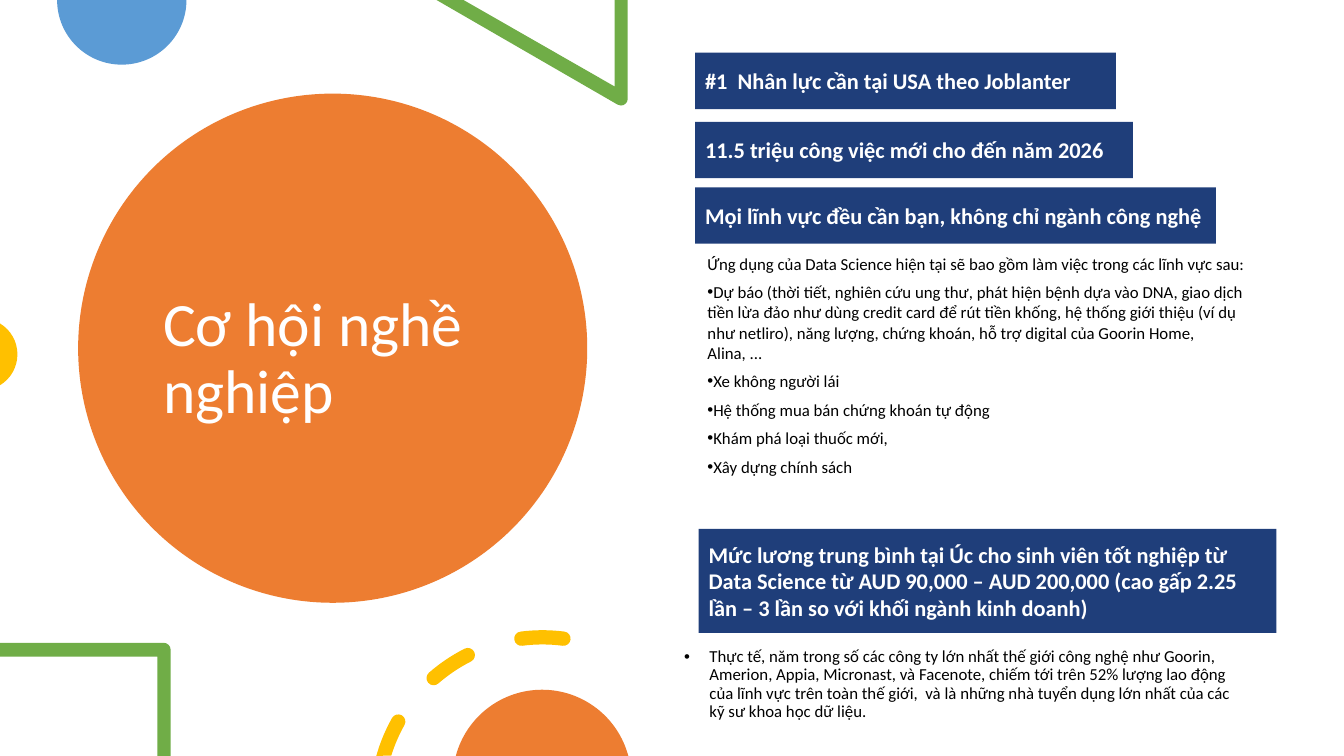
from math import cos, radians, sin, tan

from lxml import etree
from pptx import Presentation
from pptx.dml.color import RGBColor
from pptx.enum.shapes import MSO_SHAPE
from pptx.enum.text import MSO_ANCHOR, PP_ALIGN
from pptx.oxml.ns import qn
from pptx.util import Cm, Pt

COLORS = {
    "orange": "ED7D31", "blue": "5B9BD5", "green": "70AD47", "yellow": "FFC000",
    "navy": "1F3E7A", "white": "FFFFFF", "black": "000000",
}
FONT = "Calibri"
SLIDE_W, SLIDE_H = 33.87, 19.05

# Boxes are left, top, width, height in cm
TITLE = ("Cơ hội nghề nghiệp", (3.86, 3.42, 9, 11.3))
TITLE_CIRCLE = (1.97, 2.36, 12.83, 12.83)
BANNERS = [
    ("#1  Nhân lực cần tại USA theo Joblanter", (17.52, 1.33, 10.6, 1.42)),
    ("11.5 triệu công việc mới cho đến năm 2026", (17.52, 3.07, 11.03, 1.42)),
    ("Mọi lĩnh vực đều cần bạn, không chỉ ngành công nghệ", (17.52, 4.72, 13.12, 1.42)),
    ("Mức lương trung bình tại Úc cho sinh viên tốt nghiệp từ Data Science từ "
     "AUD 90,000 – AUD 200,000 (cao gấp 2.25 lần – 3 lần so với khối ngành kinh doanh)",
     (17.61, 13.33, 14.56, 2.62)),
]
APPLICATIONS_BOX = (17.58, 6.26, 14.22, 6.45)
APPLICATIONS_INTRO = "Ứng dụng của Data Science hiện tại sẽ bao gồm làm việc trong các lĩnh vực sau:"
APPLICATIONS = [
    "Dự báo (thời tiết, nghiên cứu ung thư, phát hiện bệnh dựa vào DNA, giao dịch "
    "tiền lừa đảo như dùng credit card để rút tiền khống, hệ thống giới thiệu (ví dụ "
    "như netliro), năng lượng, chứng khoán, hỗ trợ digital của Goorin Home, Alina, ...",
    "Xe không người lái",
    "Hệ thống mua bán chứng khoán tự động",
    "Khám phá loại thuốc mới,",
    "Xây dựng chính sách",
]
EMPLOYERS = (
    "Thực tế, năm trong số các công ty lớn nhất thế giới công nghệ như Goorin, "
    "Amerion, Appia, Micronast, và Facenote, chiếm tới trên 52% lượng lao động "
    "của lĩnh vực trên toàn thế giới,  và là những nhà tuyển dụng lớn nhất của các "
    "kỹ sư khoa học dữ liệu.", (16.99, 16.21, 14.6, 2.8))

# Circles cut by the slide edge: centre x, centre y, radius, angles between curves
CUT_CIRCLES = [
    ("blue", (3.07, 0, 1.63, 0, 90, 180)),
    ("yellow", (-0.47, 8.93, 0.91, -58.9, 0, 58.9)),
    ("orange", (13.66, 19.63, 2.25, 194.9, 270, 345.1)),
]
# Dashes on one ring: outer start angle, inner start angle, end angle, rounded start
RING_CENTRE, RING_RADIUS, DASH_HALF = (13.67, 20.23), 4.17, 0.18
DASHES = [
    (195.8, 197.3, 209.4, False),
    (228.9, 228.9, 243.2, True),
    (262.7, 262.7, 277.3, True),
]


def on_circle(cx, cy, radius, angle):
    return cx + radius * cos(radians(angle)), cy + radius * sin(radians(angle))


def arc(cx, cy, radius, *angles):
    """Start point, then one Bézier curve (two handles and an end) per pair of angles.

    Angles are in degrees, clockwise from the right.
    """
    pieces = [[on_circle(cx, cy, radius, angles[0])]]
    for first, last in zip(angles, angles[1:]):
        reach = 4 / 3 * tan(radians(last - first) / 4) * radius
        (x1, y1), (x2, y2) = (on_circle(cx, cy, radius, a) for a in (first, last))
        a1, a2 = radians(first), radians(last)
        pieces.append([(x1 - reach * sin(a1), y1 + reach * cos(a1)),
                       (x2 + reach * sin(a2), y2 - reach * cos(a2)), (x2, y2)])
    return pieces


def lines(*points):
    return [[point] for point in points]


def dash(outer_start, inner_start, end, rounded_start):
    """Outline of one thick arc of the ring with round caps."""
    def cap(angle, first):
        centre = on_circle(*RING_CENTRE, RING_RADIUS, angle)
        return arc(*centre, DASH_HALF, first, first + 90, first + 180)[1:]

    outline = arc(*RING_CENTRE, RING_RADIUS + DASH_HALF, outer_start, end)
    outline += cap(end, end)
    outline += arc(*RING_CENTRE, RING_RADIUS - DASH_HALF, end, inner_start)[1:]
    if rounded_start:
        outline += cap(outer_start, outer_start + 180)
    return outline


TRIANGLE = [*lines((15.82, 0), (15.49, 0), (15.49, 2.18), (11.68, 0), (11, 0)),
            *arc(15.65, 2.49, 0.17, 120, 90, 0)]
FRAME = [*lines((0, 16.2)), *arc(4.13, 16.37, 0.17, -90, 0),
         *lines((4.3, SLIDE_H), (3.97, SLIDE_H), (3.97, 16.55), (0, 16.55))]


def rgb(name):
    return RGBColor.from_string(COLORS[name])


def paint(shape, color):
    shape.shadow.inherit = False
    shape.fill.solid()
    shape.fill.fore_color.rgb = rgb(color)
    shape.line.fill.background()


def add_outline(shapes, color, *contours):
    """Draw contours made of one-point lines and three-point curves."""
    emu = [[[(Cm(x), Cm(y)) for x, y in piece] for piece in contour] for contour in contours]
    builder = shapes.build_freeform(*emu[0][0][0])
    for i, (start, *pieces) in enumerate(emu):
        if i:
            builder.move_to(*start[0])
        builder.add_line_segments([p for piece in pieces for p in piece], close=True)
    shape = builder.convert_to_shape()
    segments = shape._element.iter(qn("a:lnTo"))
    pending = iter(list(segments))
    for piece in (piece for contour in emu for piece in contour[1:]):
        segment, *others = [next(pending) for _ in piece]
        if others:
            curve = etree.Element(qn("a:cubicBezTo"))
            segment.addprevious(curve)
            for part in (segment, *others):
                curve.append(part[0])
                part.getparent().remove(part)
    paint(shape, color)


def add_box(shapes, box, color, kind=MSO_SHAPE.RECTANGLE):
    shape = shapes.add_shape(kind, *map(Cm, box))
    paint(shape, color)
    return shape


def add_text_box(shapes, box):
    frame = shapes.add_textbox(*map(Cm, box)).text_frame
    frame.word_wrap = True
    return frame


def write(paragraph, text, size, color, bold=False):
    paragraph.text = text
    paragraph.alignment = PP_ALIGN.LEFT
    font = paragraph.font
    font.name, font.size, font.bold = FONT, Pt(size), bold
    font.color.rgb = rgb(color)


def add_bullet(paragraph, indent=0):
    properties = paragraph._p.get_or_add_pPr()
    properties.set("marL", str(Cm(indent)))
    properties.set("indent", str(-Cm(indent)))
    defaults = properties.find(qn("a:defRPr"))
    defaults.addprevious(etree.Element(qn("a:buFont"), typeface="Arial"))
    defaults.addprevious(etree.Element(qn("a:buChar"), char="•"))


def main():
    deck = Presentation()
    deck.slide_width, deck.slide_height = Cm(SLIDE_W), Cm(SLIDE_H)
    shapes = deck.slides.add_slide(deck.slide_layouts[6]).shapes

    add_box(shapes, TITLE_CIRCLE, "orange", MSO_SHAPE.OVAL)
    title_text, title_box = TITLE
    title = add_text_box(shapes, title_box)
    title.vertical_anchor = MSO_ANCHOR.MIDDLE
    write(title.paragraphs[0], title_text, 44, "white")
    title.paragraphs[0].line_spacing = 0.9

    add_outline(shapes, "green", TRIANGLE)
    add_outline(shapes, "green", FRAME)
    add_outline(shapes, "yellow", *(dash(*angles) for angles in DASHES))
    for color, circle in CUT_CIRCLES:
        add_outline(shapes, color, arc(*circle))

    for text, box in BANNERS:
        banner = add_box(shapes, box, "navy").text_frame
        banner.word_wrap = True
        banner.vertical_anchor = MSO_ANCHOR.MIDDLE
        write(banner.paragraphs[0], text, 16, "white", bold=True)
        banner.paragraphs[0].space_after = Pt(6)

    applications = add_text_box(shapes, APPLICATIONS_BOX)
    write(applications.paragraphs[0], APPLICATIONS_INTRO, 12, "black")
    for text in APPLICATIONS:
        item = applications.add_paragraph()
        write(item, text, 12, "black")
        add_bullet(item)
    for paragraph in applications.paragraphs:
        paragraph.space_after = Pt(6)

    employers_text, employers_box = EMPLOYERS
    employers = add_text_box(shapes, employers_box).paragraphs[0]
    write(employers, employers_text, 12, "black")
    employers.line_spacing = 0.9
    add_bullet(employers, 0.64)

    deck.save("out.pptx")


if __name__ == "__main__":
    main()
